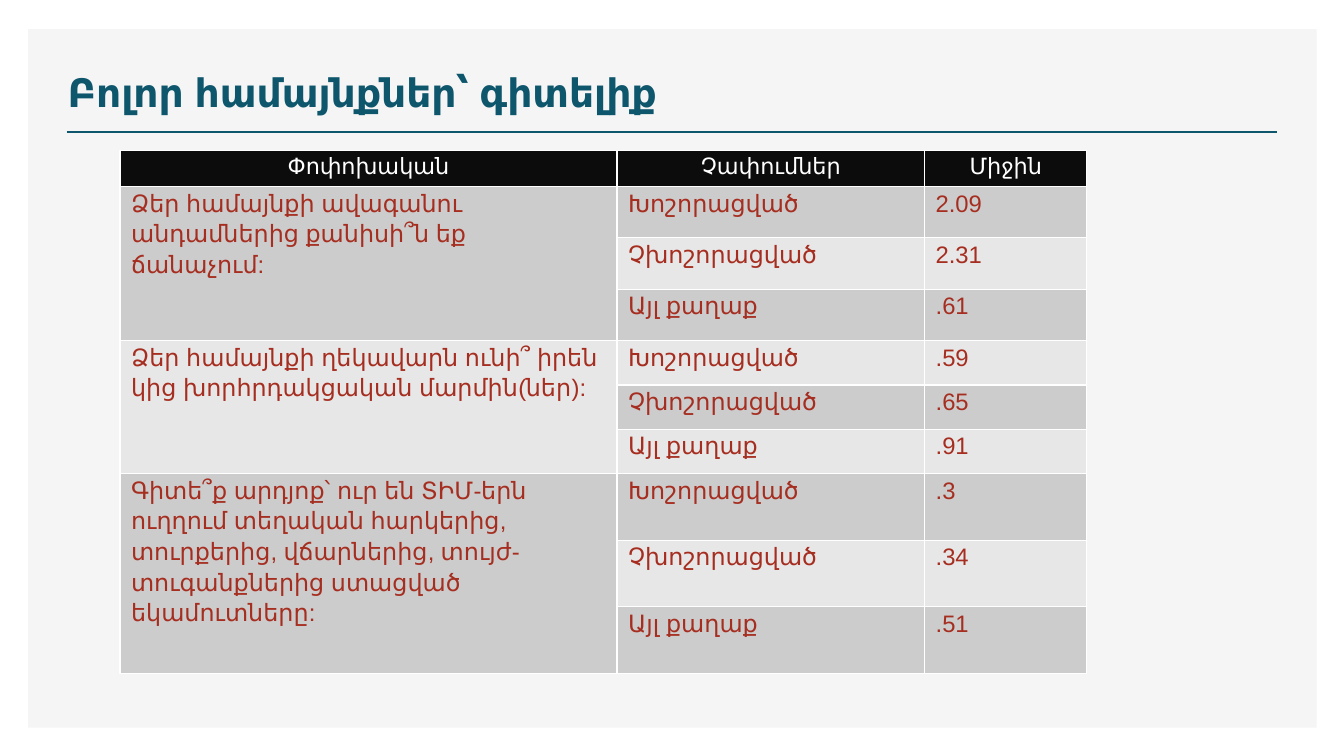
from dataclasses import dataclass

from lxml import etree
from pptx import Presentation
from pptx.dml.color import RGBColor
from pptx.enum.shapes import MSO_CONNECTOR, MSO_SHAPE
from pptx.enum.text import MSO_ANCHOR, MSO_AUTO_SIZE, PP_ALIGN
from pptx.oxml import parse_xml
from pptx.oxml.ns import nsdecls, qn
from pptx.slide import Slide
from pptx.table import Table, _Cell
from pptx.text.text import _Paragraph
from pptx.util import Emu, Pt

RECTANGLE = MSO_SHAPE.RECTANGLE
STRAIGHT = MSO_CONNECTOR.STRAIGHT
LEFT, CENTER = PP_ALIGN.LEFT, PP_ALIGN.CENTER
BOTTOM = MSO_ANCHOR.BOTTOM
NO_AUTOFIT = MSO_AUTO_SIZE.NONE

WHITE = RGBColor(0xFF, 0xFF, 0xFF)
PANEL = RGBColor(0xF5, 0xF5, 0xF5)
TEAL = RGBColor(0x0E, 0x56, 0x6C)
BLACK = RGBColor(0x0C, 0x0C, 0x0C)
RED = RGBColor(0xA6, 0x2E, 0x20)
BANDS = (RGBColor(0xE7, 0xE7, 0xE7), RGBColor(0xCC, 0xCC, 0xCC))

FONT = "Arial"
PX_PER_INCH = 100
TITLE_ONLY = 5


@dataclass(frozen=True)
class Question:
    text: str
    means: tuple[str, str, str]
    row_height: int


HEADERS = ("Փոփոխական", "Չափումներ", "Միջին")
COMMUNITIES = ("Խոշորացված", "Չխոշորացված", "Այլ քաղաք")
COLUMN_WIDTHS = (493, 305, 161)
HEADER_HEIGHT = 36
QUESTIONS = (
    Question("Ձեր համայնքի ավագանու անդամներից քանիսի՞ն եք ճանաչում:",
             ("2.09", "2.31", ".61"), 51),
    Question("Ձեր համայնքի ղեկավարն ունի՞ իրեն կից խորհրդակցական մարմին(ներ):",
             (".59", ".65", ".91"), 44),
    Question("Գիտե՞ք արդյոք՝ ուր են ՏԻՄ-երն ուղղում տեղական հարկերից, "
             "տուրքերից, վճարներից, տույժ-տուգանքներից ստացված եկամուտները:",
             (".3", ".34", ".51"), 66),
)


def px(n: int) -> Emu:
    return Emu(n * 914400 // PX_PER_INCH)


def format_runs(p: _Paragraph, size: int, color: RGBColor, bold: bool = False) -> None:
    for r in p.runs:
        r.font.name = FONT
        r.font.size = Pt(size)
        r.font.bold = bold
        r.font.color.rgb = color


def add_title(s: Slide, text: str) -> None:
    title = s.shapes.title
    title.left, title.top, title.width, title.height = px(57), px(49), px(752), px(70)
    tf = title.text_frame
    tf.text = text
    tf.word_wrap = True
    tf.auto_size = NO_AUTOFIT
    tf.vertical_anchor = BOTTOM
    p = tf.paragraphs[0]
    p.alignment = LEFT
    format_runs(p, 28, TEAL, bold=True)


def add_backdrop(s: Slide) -> None:
    panel = s.shapes.add_shape(RECTANGLE, px(28), px(29), px(1278), px(693))
    panel.shadow.inherit = False
    panel.fill.solid()
    panel.fill.fore_color.rgb = PANEL
    panel.line.fill.background()
    rule = s.shapes.add_connector(STRAIGHT, px(66), px(131), px(1267), px(131))
    rule.line.color.rgb = TEAL
    rule.line.width = Pt(2)
    etree.SubElement(rule.element.spPr, qn("a:effectLst"))
    for shape in (panel, rule):
        s.shapes.title.element.addprevious(shape.element)


def style_cell(cell: _Cell, fill: RGBColor) -> None:
    cell.margin_left = cell.margin_right = px(11)
    cell.margin_top = cell.margin_bottom = 0
    tc_pr = cell._tc.get_or_add_tcPr()
    for side in ("lnL", "lnR", "lnT", "lnB"):
        tc_pr.append(parse_xml(
            f'<a:{side} {nsdecls("a")} w="{Pt(1)}"><a:solidFill>'
            f'<a:srgbClr val="{WHITE}"/></a:solidFill></a:{side}>'))
    cell.fill.solid()
    cell.fill.fore_color.rgb = fill


def write_cell(cell: _Cell, text: str, size: int = 17, color: RGBColor = RED,
               align: PP_ALIGN = LEFT) -> None:
    cell.text_frame.text = text
    p = cell.text_frame.paragraphs[0]
    p.alignment = align
    p.line_spacing = 1.15
    p.space_after = Pt(10)
    format_runs(p, size, color)


def fill_question(table: Table, top: int, question: Question) -> None:
    for i, (community, mean) in enumerate(zip(COMMUNITIES, question.means)):
        row = top + i
        table.rows[row].height = px(question.row_height)
        for cell in table.rows[row].cells:
            style_cell(cell, BANDS[row % 2])
        write_cell(table.cell(row, 1), community)
        write_cell(table.cell(row, 2), mean)
    table.cell(top, 0).merge(table.cell(top + len(COMMUNITIES) - 1, 0))
    write_cell(table.cell(top, 0), question.text)


def add_means_table(s: Slide) -> None:
    group = len(COMMUNITIES)
    height = HEADER_HEIGHT + group * sum(q.row_height for q in QUESTIONS)
    table = s.shapes.add_table(
        1 + group * len(QUESTIONS), len(HEADERS),
        px(119), px(149), px(sum(COLUMN_WIDTHS)), px(height)).table
    table.rows[0].height = px(HEADER_HEIGHT)
    for i, (header, width) in enumerate(zip(HEADERS, COLUMN_WIDTHS)):
        table.columns[i].width = px(width)
        style_cell(table.cell(0, i), BLACK)
        write_cell(table.cell(0, i), header, 16, WHITE, CENTER)
    for i, question in enumerate(QUESTIONS):
        fill_question(table, 1 + group * i, question)


def main() -> None:
    prs = Presentation()
    prs.slide_width, prs.slide_height = px(1333), px(750)
    s = prs.slides.add_slide(prs.slide_layouts[TITLE_ONLY])
    add_title(s, "Բոլոր համայնքներ՝ գիտելիք")
    add_backdrop(s)
    add_means_table(s)
    prs.save("out.pptx")


if __name__ == "__main__":
    main()
